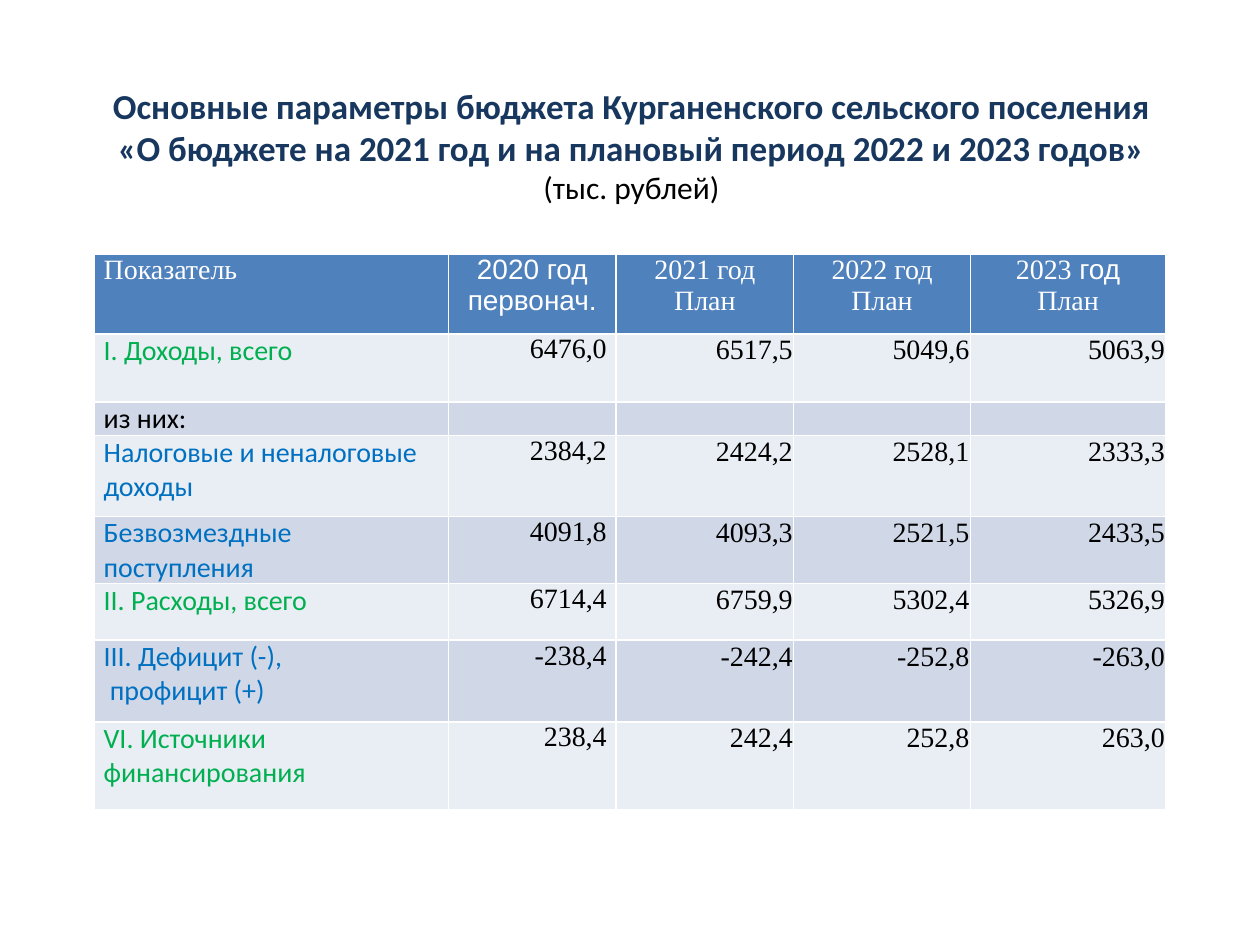
import pptx
import pptx.util
from lxml import etree
from pptx.dml.color import RGBColor
from pptx.enum.text import MSO_ANCHOR, PP_ALIGN
from pptx.oxml.ns import qn
from pptx.util import Cm, Pt

NAVY = RGBColor(0x17, 0x37, 0x5E)
BLACK = RGBColor(0, 0, 0)
WHITE = RGBColor(0xFF, 0xFF, 0xFF)
HEADER = RGBColor(0x4F, 0x81, 0xBD)
BANDS = RGBColor(0xE9, 0xED, 0xF4), RGBColor(0xD0, 0xD8, 0xE8)
GREEN = RGBColor(0x00, 0xB0, 0x50)
BLUE = RGBColor(0x00, 0x70, 0xC0)

SANS, SERIF, ARIAL = "Calibri", "Times New Roman", "Arial"
LEFT, CENTER, RIGHT = PP_ALIGN.LEFT, PP_ALIGN.CENTER, PP_ALIGN.RIGHT

COLUMN_WIDTHS = [7.14, 3.38, 3.58, 3.56, 3.94]
ROW_HEIGHTS = [1.6, 1.37, 0.64, 1.63, 1.17, 1.14, 1.65, 1.78]

# One entry per cell: paragraphs made of (text, font) runs
HEADINGS = [
    [[("Показатель", SERIF)]],
    [[("2020 год первонач.", ARIAL)]],
    [[("2021 год", SERIF)], [("План", SERIF)]],
    [[("2022 год", SERIF)], [("План", SERIF)]],
    [[("2023", SERIF), (" год", ARIAL)], [("План", SERIF)]],
]

# Label lines, label colour, values for 2020 to 2023
INDICATORS = [
    (["I. Доходы, всего"], GREEN, ["6476,0", "6517,5", "5049,6", "5063,9"]),
    (["из них:"], BLACK, [""] * 4),
    (["Налоговые и неналоговые доходы"], BLUE, ["2384,2", "2424,2", "2528,1", "2333,3"]),
    (["Безвозмездные поступления"], BLUE, ["4091,8", "4093,3", "2521,5", "2433,5"]),
    (["II. Расходы, всего"], GREEN, ["6714,4", "6759,9", "5302,4", "5326,9"]),
    (["III. Дефицит (-),", " профицит (+)"], BLUE, ["-238,4", "-242,4", "-252,8", "-263,0"]),
    (["VI. Источники финансирования"], GREEN, ["238,4", "242,4", "252,8", "263,0"]),
]


class SlideBuilder:
    def __init__(self, s, table_size=16, border=Pt(1)):
        self.s = s
        self.table_size = table_size
        self.border = border

    def run(self, p, text, font, size, color, bold=False):
        r = p.add_run()
        r.text = text
        r.font.name = font
        r.font.size = Pt(size)
        r.font.color.rgb = color
        r.font.bold = bold

    def title(self, x, y, w, h, lines):
        """Add a centred title; each line is (text, size, colour, bold)."""
        tf = self.s.shapes.add_textbox(Cm(x), Cm(y), Cm(w), Cm(h)).text_frame
        tf.word_wrap = True
        tf.vertical_anchor = MSO_ANCHOR.MIDDLE
        p = tf.paragraphs[0]
        p.alignment = CENTER
        for i, (text, size, color, bold) in enumerate(lines):
            if i:
                p.add_line_break()
            self.run(p, text, SANS, size, color, bold)

    def table(self, x, y, widths, heights):
        frame = self.s.shapes.add_table(len(heights), len(widths), Cm(x), Cm(y),
                                        Cm(sum(widths)), Cm(sum(heights)))
        for column, width in zip(frame.table.columns, widths):
            column.width = Cm(width)
        for row, height in zip(frame.table.rows, heights):
            row.height = Cm(height)
        return frame.table

    def borders(self, cell, color):
        tc_pr = cell._tc.get_or_add_tcPr()
        for side in ("a:lnL", "a:lnR", "a:lnT", "a:lnB"):
            line = etree.SubElement(tc_pr, qn(side), w=str(self.border))
            fill = etree.SubElement(line, qn("a:solidFill"))
            etree.SubElement(fill, qn("a:srgbClr"), val=str(color))

    def cell(self, cell, paragraphs, color, fill, align, side=0.19, top=0):
        self.borders(cell, WHITE)
        cell.fill.solid()
        cell.fill.fore_color.rgb = fill
        cell.margin_left = cell.margin_right = Cm(side)
        cell.margin_top, cell.margin_bottom = Cm(top), Cm(0)
        tf = cell.text_frame
        for i, runs in enumerate(paragraphs):
            p = tf.add_paragraph() if i else tf.paragraphs[0]
            p.alignment = align
            for text, font in runs:
                self.run(p, text, font, self.table_size, color)
            if not runs:  # keeps an empty cell from stretching its row
                p._p.get_or_add_endParaRPr().set("sz", str(self.table_size * 100))


def main():
    prs = pptx.Presentation()
    prs.slide_width, prs.slide_height = Cm(25.4), Cm(19.05)
    b = SlideBuilder(prs.slides.add_slide(prs.slide_layouts[6]))

    b.title(1.3, 1.12, 22.86, 3.61, [
        ("Основные параметры бюджета Курганенского сельского поселения", 20, NAVY, True),
        ("«О бюджете на 2021 год и на плановый период 2022 и 2023 годов»", 20, NAVY, True),
        ("(тыс. рублей)", 18, BLACK, False),
    ])

    table = b.table(1.9, 5.13, COLUMN_WIDTHS, ROW_HEIGHTS)
    for col, paragraphs in enumerate(HEADINGS):
        b.cell(table.cell(0, col), paragraphs, WHITE, HEADER, CENTER if col else LEFT)

    for row, (label, color, values) in enumerate(INDICATORS, 1):
        fill = BANDS[(row - 1) % 2]
        b.cell(table.cell(row, 0), [[(line, SANS)] for line in label], color, fill, LEFT)
        for col, value in enumerate(values, 1):
            runs = [(value, SERIF)] if value else []
            margins = (0.19, 0) if col == 1 or not value else (0.02, 0.02)
            b.cell(table.cell(row, col), [runs], BLACK, fill, RIGHT, *margins)

    prs.save("out.pptx")


if __name__ == "__main__":
    main()
